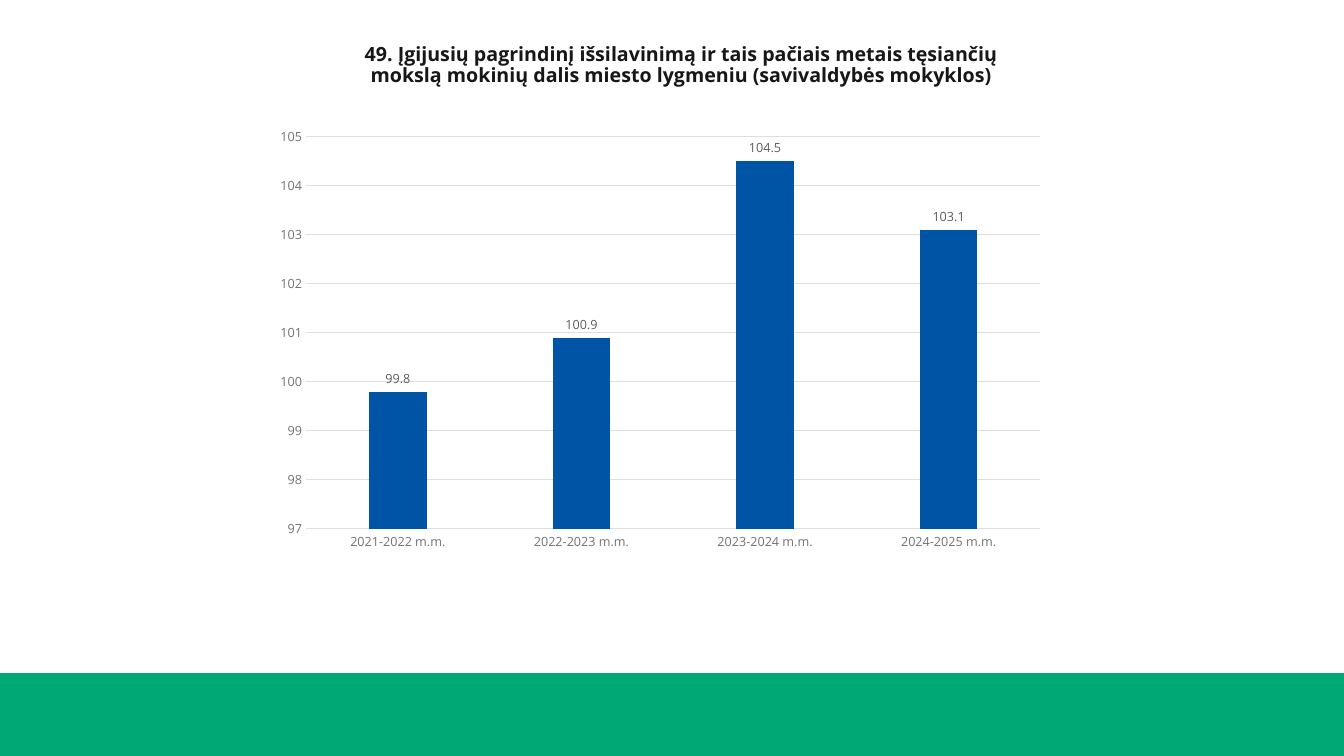
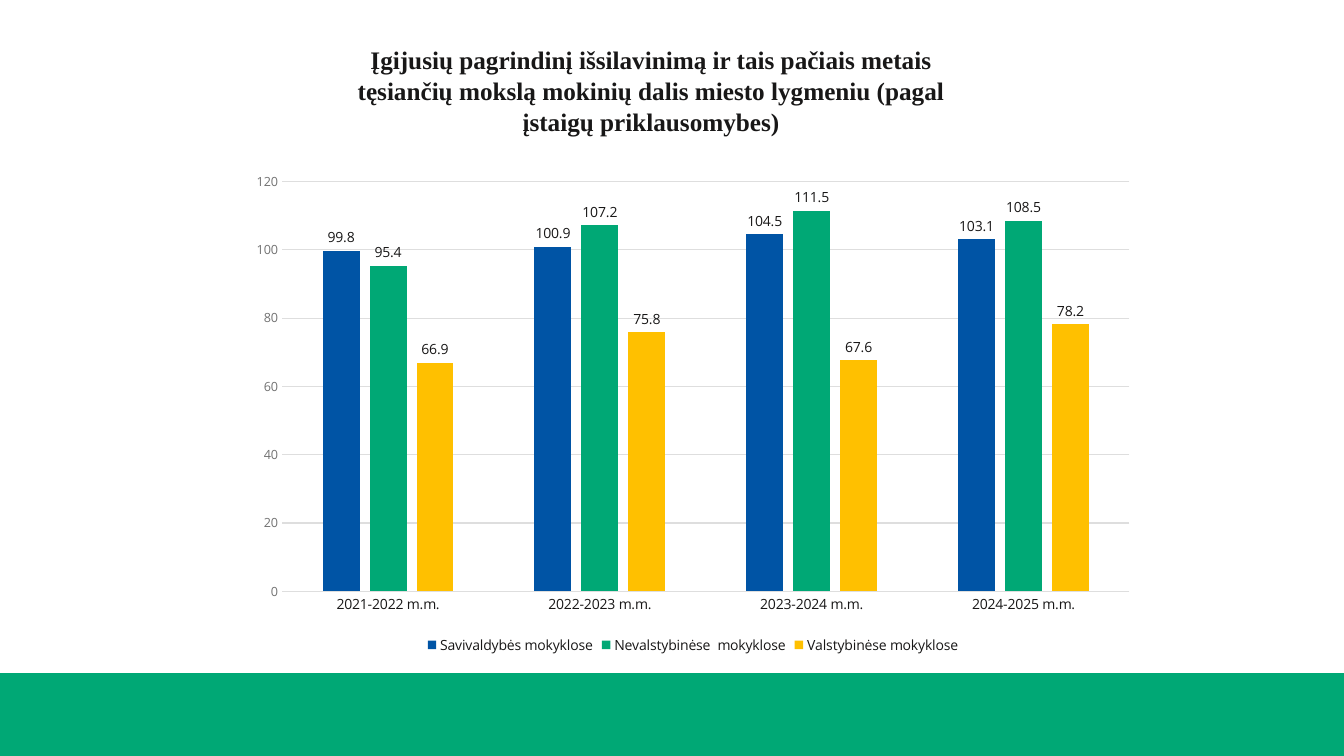
from dataclasses import dataclass

from pptx import Presentation
from pptx.chart.data import CategoryChartData
from pptx.dml.color import RGBColor
from pptx.enum.chart import XL_CHART_TYPE, XL_LABEL_POSITION, XL_LEGEND_POSITION, XL_TICK_MARK
from pptx.enum.shapes import MSO_SHAPE
from pptx.enum.text import MSO_AUTO_SIZE, PP_ALIGN
from pptx.util import Emu, Pt

COLUMNS = XL_CHART_TYPE.COLUMN_CLUSTERED
ABOVE_BAR = XL_LABEL_POSITION.OUTSIDE_END
LEGEND_BOTTOM = XL_LEGEND_POSITION.BOTTOM
NO_TICK = XL_TICK_MARK.NONE
RECTANGLE = MSO_SHAPE.RECTANGLE
GROW = MSO_AUTO_SIZE.SHAPE_TO_FIT_TEXT
CENTER = PP_ALIGN.CENTER

EMU_PER_PX = 9525
SLIDE_WIDTH, SLIDE_HEIGHT = 1280, 720
BAND_TOP = 641
SANS, SERIF = "Open Sans", "Times New Roman"
COLORS = {
    "blue": "0054A5",
    "green": "00A875",
    "yellow": "FFC000",
    "ink": "181717",
    "chart_text": "262626",
    "axis_text": "727272",
    "label_text": "5C5C5C",
    "grid": "DEDEDE",
}
SCHOOL_YEARS = ["2021-2022 m.m.", "2022-2023 m.m.", "2023-2024 m.m.", "2024-2025 m.m."]
MUNICIPAL_SHARES = (99.8, 100.9, 104.5, 103.1)


@dataclass(frozen=True)
class Box:
    left: int
    top: int
    width: int
    height: int

    def emu(self) -> list[Emu]:
        return [Emu(n * EMU_PER_PX) for n in (self.left, self.top, self.width, self.height)]


@dataclass(frozen=True)
class TextStyle:
    size: int
    color: str
    font: str = SANS
    bold: bool = False


@dataclass(frozen=True)
class Title:
    text: str
    box: Box
    style: TextStyle
    line_spacing: float


@dataclass(frozen=True)
class SchoolGroup:
    name: str
    shares: tuple[float, ...]
    color: str


@dataclass(frozen=True)
class ShareChart:
    box: Box
    groups: list[SchoolGroup]
    scale: tuple[int, int, int]
    year_style: TextStyle
    label_style: TextStyle
    has_legend: bool


AXIS_STYLE = TextStyle(9, "axis_text")
DARK_STYLE = TextStyle(10, "ink")

SLIDES = [
    (
        Title(
            "49. Įgijusių pagrindinį išsilavinimą ir tais pačiais metais tęsiančių "
            "mokslą mokinių dalis miesto lygmeniu (savivaldybės mokyklos)",
            Box(306, 38, 686, 55),
            TextStyle(14, "ink", bold=True),
            0.9,
        ),
        ShareChart(
            Box(252, 113, 754, 420),
            [SchoolGroup("Series 1", MUNICIPAL_SHARES, "blue")],
            (97, 105, 1),
            AXIS_STYLE,
            TextStyle(9, "label_text"),
            has_legend=False,
        ),
    ),
    (
        Title(
            "Įgijusių pagrindinį išsilavinimą ir tais pačiais metais tęsiančių "
            "mokslą mokinių dalis miesto lygmeniu (pagal įstaigų priklausomybes)",
            Box(300, 36, 640, 97),
            TextStyle(18, "ink", SERIF, bold=True),
            1.04,
        ),
        ShareChart(
            Box(227, 155, 866, 472),
            [
                SchoolGroup("Savivaldybės mokyklose", MUNICIPAL_SHARES, "blue"),
                SchoolGroup("Nevalstybinėse  mokyklose", (95.4, 107.2, 111.5, 108.5), "green"),
                SchoolGroup("Valstybinėse mokyklose", (66.9, 75.8, 67.6, 78.2), "yellow"),
            ],
            (0, 120, 20),
            DARK_STYLE,
            DARK_STYLE,
            has_legend=True,
        ),
    ),
]


def rgb(name: str) -> RGBColor:
    return RGBColor.from_string(COLORS[name])


def style_font(font, style: TextStyle) -> None:
    font.name = style.font
    font.size = Pt(style.size)
    font.bold = style.bold
    font.color.rgb = rgb(style.color)


def style_grid_line(line) -> None:
    line.color.rgb = rgb("grid")
    line.width = Pt(0.75)


def add_band(slide) -> None:
    box = Box(0, BAND_TOP, SLIDE_WIDTH, SLIDE_HEIGHT - BAND_TOP)
    band = slide.shapes.add_shape(RECTANGLE, *box.emu())
    band.shadow.inherit = False
    band.fill.solid()
    band.fill.fore_color.rgb = rgb("green")
    band.line.fill.background()


def add_title(slide, title: Title) -> None:
    frame = slide.shapes.add_textbox(*title.box.emu()).text_frame
    frame.word_wrap = True
    frame.auto_size = GROW
    paragraph = frame.paragraphs[0]
    paragraph.alignment = CENTER
    paragraph.line_spacing = title.line_spacing
    run = paragraph.add_run()
    run.text = title.text
    style_font(run.font, title.style)


def style_axes(chart, share_chart: ShareChart) -> None:
    years, shares = chart.category_axis, chart.value_axis
    for axis, style in ((years, share_chart.year_style), (shares, AXIS_STYLE)):
        axis.major_tick_mark = axis.minor_tick_mark = NO_TICK
        style_font(axis.tick_labels.font, style)
    years.has_major_gridlines = False
    style_grid_line(years.format.line)
    shares.minimum_scale, shares.maximum_scale, shares.major_unit = share_chart.scale
    shares.has_major_gridlines = True
    style_grid_line(shares.major_gridlines.format.line)
    shares.format.line.fill.background()


def add_share_chart(slide, share_chart: ShareChart) -> None:
    data = CategoryChartData()
    data.categories = SCHOOL_YEARS
    for group in share_chart.groups:
        data.add_series(group.name, group.shares)
    chart = slide.shapes.add_chart(COLUMNS, *share_chart.box.emu(), data).chart
    chart.has_title = False
    style_font(chart.font, TextStyle(10, "chart_text"))
    style_axes(chart, share_chart)

    plot = chart.plots[0]
    plot.gap_width = 219
    plot.overlap = -27
    plot.vary_by_categories = False
    for bars, group in zip(plot.series, share_chart.groups):
        bars.invert_if_negative = False
        bars.format.fill.solid()
        bars.format.fill.fore_color.rgb = rgb(group.color)
        labels = bars.data_labels
        labels.show_value = True
        labels.position = ABOVE_BAR
        style_font(labels.font, share_chart.label_style)

    chart.has_legend = share_chart.has_legend
    if share_chart.has_legend:
        chart.legend.position = LEGEND_BOTTOM
        chart.legend.include_in_layout = False
        style_font(chart.legend.font, DARK_STYLE)


def main() -> None:
    presentation = Presentation()
    presentation.slide_width = Emu(SLIDE_WIDTH * EMU_PER_PX)
    presentation.slide_height = Emu(SLIDE_HEIGHT * EMU_PER_PX)
    blank_layout = presentation.slide_layouts[6]
    for title, share_chart in SLIDES:
        slide = presentation.slides.add_slide(blank_layout)
        add_band(slide)
        add_share_chart(slide, share_chart)
        add_title(slide, title)
    presentation.save("out.pptx")


if __name__ == "__main__":
    main()
